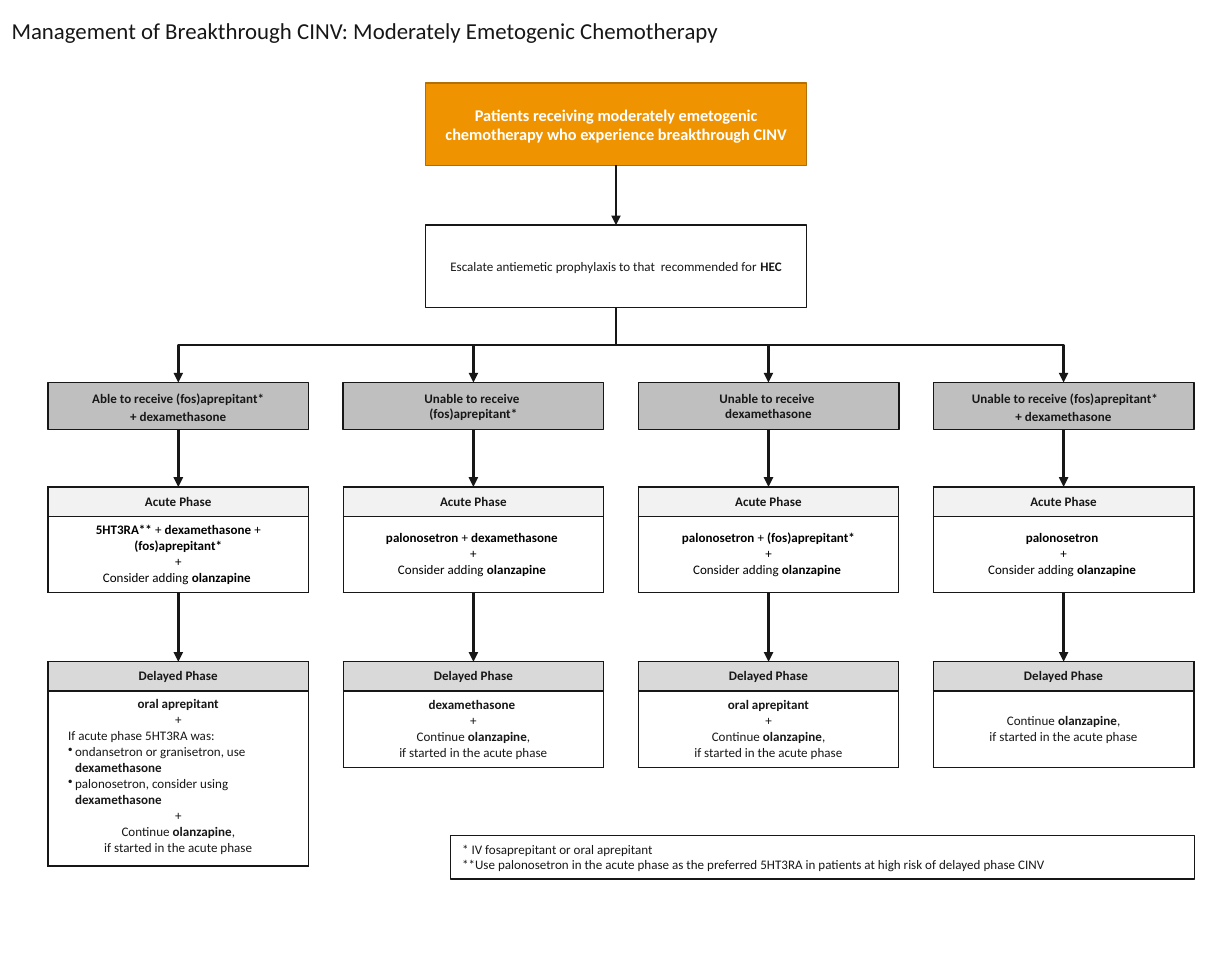
"""Build the flowchart for managing breakthrough CINV."""
from dataclasses import dataclass

from lxml import etree
from pptx import Presentation
from pptx import util as u
from pptx.dml.color import RGBColor
from pptx.enum import shapes, text
from pptx.oxml.ns import qn


@dataclass(frozen=True)
class Theme:
    font: str = "Calibri"
    ink: str = "171717"
    black: str = "000000"
    white: str = "FFFFFF"
    orange: str = "EF9400"
    orange_edge: str = "B36F01"
    option: str = "BFBFBF"
    acute: str = "F2F2F2"
    delayed: str = "D9D9D9"
    title_size: float = 14
    lead_size: float = 10
    body_size: float = 8
    border: float = 1
    arrow: float = 1.5


THEME = Theme()
CENTER_X = 5.25
COLUMN_LEFT, COLUMN_STEP, COLUMN_WIDTH = 0.41, 2.515, 2.22
OPTION_TOP, ACUTE_TOP, DELAYED_TOP = 3.26, 4.15, 5.64
OPTION_HEIGHT, HEADING_HEIGHT, BODY_HEIGHT = 0.4, 0.25, 0.65

CONSIDER = ["+", "Consider adding |olanzapine "]
CONTINUE = ["Continue |olanzapine|,", "if started in the acute phase"]
OPTIONS = [
    dict(label=["Able to receive (fos)aprepitant*", "+ dexamethasone"], spacing=11.1,
         acute=["|5HT3RA**| + |dexamethasone| + |(fos)aprepitant*"],
         delayed=["|oral aprepitant", "+", "If acute phase 5HT3RA was:",
                  "•ondansetron or granisetron, use |dexamethasone",
                  "•palonosetron, consider using |dexamethasone", "+", *CONTINUE],
         delayed_format=dict(body_height=1.49, margin=0.04, left_lines=(2, 3, 4),
                             anchor=text.MSO_ANCHOR.TOP)),
    dict(label=["Unable to receive ", "(fos)aprepitant*"],
         acute=["|palonosetron| + |dexamethasone "],
         delayed=["|dexamethasone ", "+", *CONTINUE]),
    dict(label=["Unable to receive ", "dexamethasone"],
         acute=["|palonosetron| + |(fos)aprepitant*"],
         delayed=["|oral aprepitant", "+", *CONTINUE]),
    dict(label=[" Unable to receive (fos)aprepitant*", "+ dexamethasone"], spacing=11.1,
         acute=["|palonosetron "], delayed=CONTINUE),
]


def rgb(value):
    return RGBColor.from_string(value)


def write(frame, lines, size=THEME.body_size, color=THEME.ink, bold=False,
          align=text.PP_ALIGN.CENTER, spacing=None, left_lines=()):
    """Fill a text frame; each bar in a line switches bold on or off."""
    for index, line in enumerate(lines):
        paragraph = frame.paragraphs[0] if index == 0 else frame.add_paragraph()
        paragraph.alignment = text.PP_ALIGN.LEFT if index in left_lines else align
        if spacing:
            paragraph.line_spacing = u.Pt(spacing)
        if index in left_lines:
            properties = paragraph._p.get_or_add_pPr()
            properties.set("marL", str(u.Inches(0.19)))
            properties.set("indent", str(u.Inches(-0.06)))
            if line.startswith("•"):
                etree.SubElement(properties, qn("a:buChar"), char="•")
        for part, words in enumerate(line.removeprefix("•").split("|")):
            if words:
                run = paragraph.add_run()
                run.text = words
                run.font.name = THEME.font
                run.font.size = u.Pt(size)
                run.font.bold = bold != (part % 2 == 1)
                run.font.color.rgb = rgb(color)


class Flowchart:
    def __init__(self, slide, theme):
        self.slide, self.theme = slide, theme

    def title(self, words):
        shape = self.slide.shapes.add_textbox(0, 0, u.Inches(10.5), u.Inches(0.51))
        frame = shape.text_frame
        frame.word_wrap = True
        frame.vertical_anchor = text.MSO_ANCHOR.MIDDLE
        write(frame, [words], size=self.theme.title_size, align=text.PP_ALIGN.LEFT)

    def box(self, left, top, width, height, lines, fill=None, edge=None,
            anchor=text.MSO_ANCHOR.MIDDLE, **text_format):
        shape = self.slide.shapes.add_shape(
            shapes.MSO_SHAPE.RECTANGLE, *map(u.Inches, (left, top, width, height)))
        shape.shadow.inherit = False
        if fill:
            shape.fill.solid()
            shape.fill.fore_color.rgb = rgb(fill)
        else:
            shape.fill.background()
        shape.line.color.rgb = rgb(edge or self.theme.ink)
        shape.line.width = u.Pt(self.theme.border)
        shape.text_frame.word_wrap = True
        shape.text_frame.vertical_anchor = anchor
        write(shape.text_frame, lines, **text_format)
        return shape

    def border(self, cell):
        properties = cell._tc.get_or_add_tcPr()
        for side in ("lnL", "lnR", "lnT", "lnB"):
            line = etree.SubElement(properties, qn(f"a:{side}"),
                                    w=str(u.Pt(self.theme.border)))
            fill = etree.SubElement(line, qn("a:solidFill"))
            etree.SubElement(fill, qn("a:srgbClr"), val=self.theme.ink)

    def phase(self, left, top, heading, fill, lines, body_height=BODY_HEIGHT,
              margin=0.07, anchor=text.MSO_ANCHOR.MIDDLE, **text_format):
        table = self.slide.shapes.add_table(
            2, 1, *map(u.Inches, (left, top, COLUMN_WIDTH,
                                  HEADING_HEIGHT + body_height))).table
        table.first_row = table.horz_banding = False
        table.rows[0].height = u.Inches(HEADING_HEIGHT)
        table.rows[1].height = u.Inches(body_height)
        for cell in table.iter_cells():
            self.border(cell)
            cell.margin_left = cell.margin_right = u.Inches(margin)
            cell.margin_top = cell.margin_bottom = u.Inches(0.04)
        head, body = table.cell(0, 0), table.cell(1, 0)
        head.fill.solid()
        head.fill.fore_color.rgb = rgb(fill)
        head.vertical_anchor = text.MSO_ANCHOR.MIDDLE
        write(head.text_frame, [heading], bold=True)
        body.fill.background()
        body.vertical_anchor = anchor
        write(body.text_frame, lines, **text_format)

    def arrow(self, x, top, bottom, start=None, end=None, end_x=None):
        bent = end_x is not None
        kind = shapes.MSO_CONNECTOR.ELBOW if bent else shapes.MSO_CONNECTOR.STRAIGHT
        target_x = end_x if bent else x
        connector = self.slide.shapes.add_connector(
            kind, *map(u.Inches, (x, top, target_x, bottom)))
        if start is not None:
            connector.begin_connect(start, 2)
        if end is not None:
            connector.end_connect(end, 0)
        if bent:
            self.turn_down(connector, x, top, end_x, bottom)
        connector.line.color.rgb = rgb(self.theme.ink)
        connector.line.width = u.Pt(self.theme.arrow)
        properties = connector._element.spPr
        etree.SubElement(properties.find(qn("a:ln")), qn("a:tailEnd"), type="triangle")
        etree.SubElement(properties, qn("a:effectLst"))

    def turn_down(self, connector, x, top, end_x, bottom):
        """Rotate an elbow so that it leaves and arrives vertically."""
        drop, reach = bottom - top, abs(end_x - x)
        connector.left = u.Inches((x + end_x - drop) / 2)
        connector.top = u.Inches((top + bottom - reach) / 2)
        connector.width, connector.height = u.Inches(drop), u.Inches(reach)
        rightward = end_x > x
        transform = connector._element.spPr.find(qn("a:xfrm"))
        transform.set("rot", str((270 if rightward else 90) * 60000))
        transform.set("flipH", "1" if rightward else "0")
        transform.set("flipV", "0")


def main():
    presentation = Presentation()
    presentation.slide_width, presentation.slide_height = u.Inches(10.5), u.Inches(8.25)
    slide = presentation.slides.add_slide(presentation.slide_layouts[6])
    chart = Flowchart(slide, THEME)
    chart.title("Management of Breakthrough CINV: Moderately Emetogenic Chemotherapy")
    patients = chart.box(
        3.625, 0.71, 3.25, 0.7,
        ["Patients receiving moderately emetogenic chemotherapy who experience breakthrough CINV"],
        fill=THEME.orange, edge=THEME.orange_edge, size=THEME.lead_size,
        color=THEME.white, bold=True)
    escalate = chart.box(
        3.625, 1.92, 3.25, 0.7,
        ["Escalate antiemetic prophylaxis to that  recommended for |HEC"], fill=THEME.white)
    chart.arrow(CENTER_X, 1.41, 1.92, patients, escalate)
    for column, option in enumerate(OPTIONS):
        left = COLUMN_LEFT + column * COLUMN_STEP
        middle = left + COLUMN_WIDTH / 2
        label = chart.box(left, OPTION_TOP, COLUMN_WIDTH, OPTION_HEIGHT, option["label"],
                          fill=THEME.option, bold=True, spacing=option.get("spacing"))
        chart.phase(left, ACUTE_TOP, "Acute Phase", THEME.acute,
                    option["acute"] + CONSIDER, color=THEME.black)
        chart.phase(left, DELAYED_TOP, "Delayed Phase", THEME.delayed,
                    option["delayed"], **option.get("delayed_format", {}))
        chart.arrow(CENTER_X, 2.62, OPTION_TOP, escalate, label, end_x=middle)
        chart.arrow(middle, OPTION_TOP + OPTION_HEIGHT, ACUTE_TOP, label)
        chart.arrow(middle, ACUTE_TOP + HEADING_HEIGHT + BODY_HEIGHT, DELAYED_TOP)
    chart.box(3.84, 7.12, 6.34, 0.37,
              ["* IV fosaprepitant or oral aprepitant",
               "**Use palonosetron in the acute phase as the preferred 5HT3RA "
               "in patients at high risk of delayed phase CINV"],
              anchor=text.MSO_ANCHOR.TOP, align=text.PP_ALIGN.LEFT)
    presentation.save("out.pptx")


if __name__ == "__main__":
    main()
